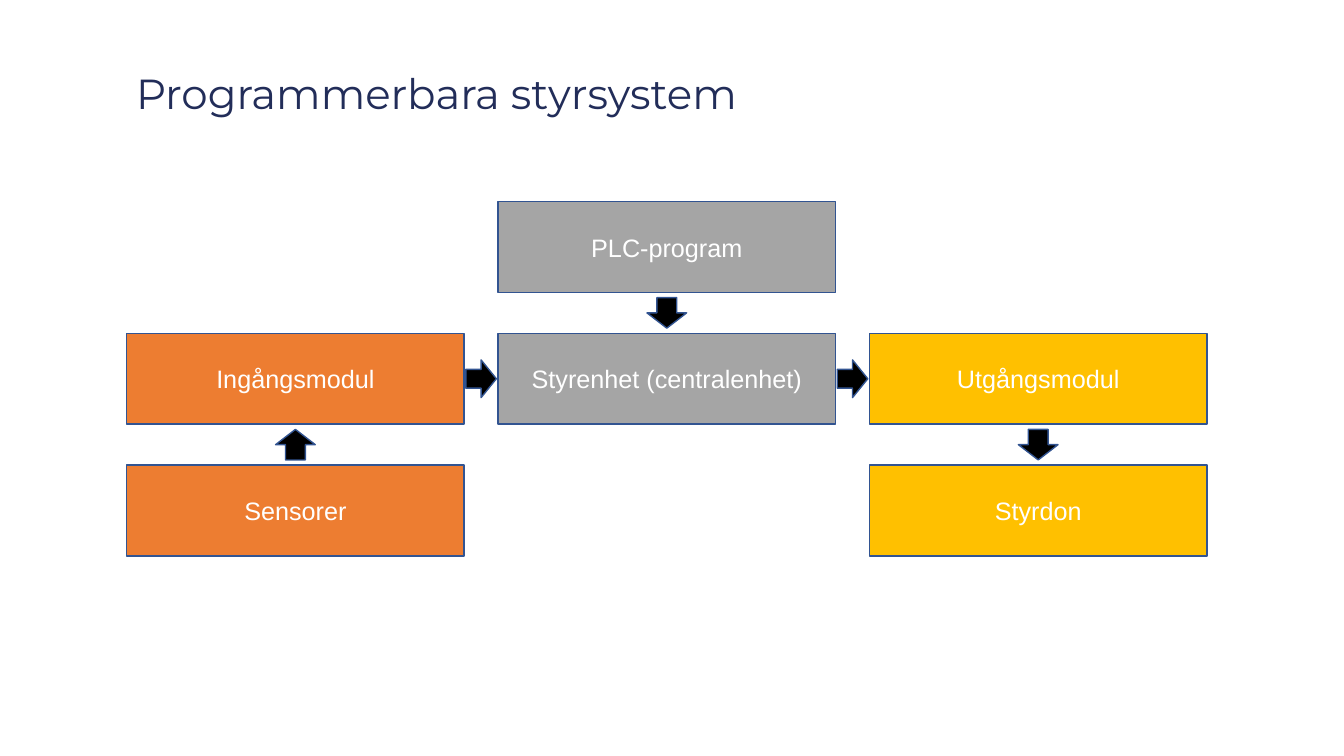
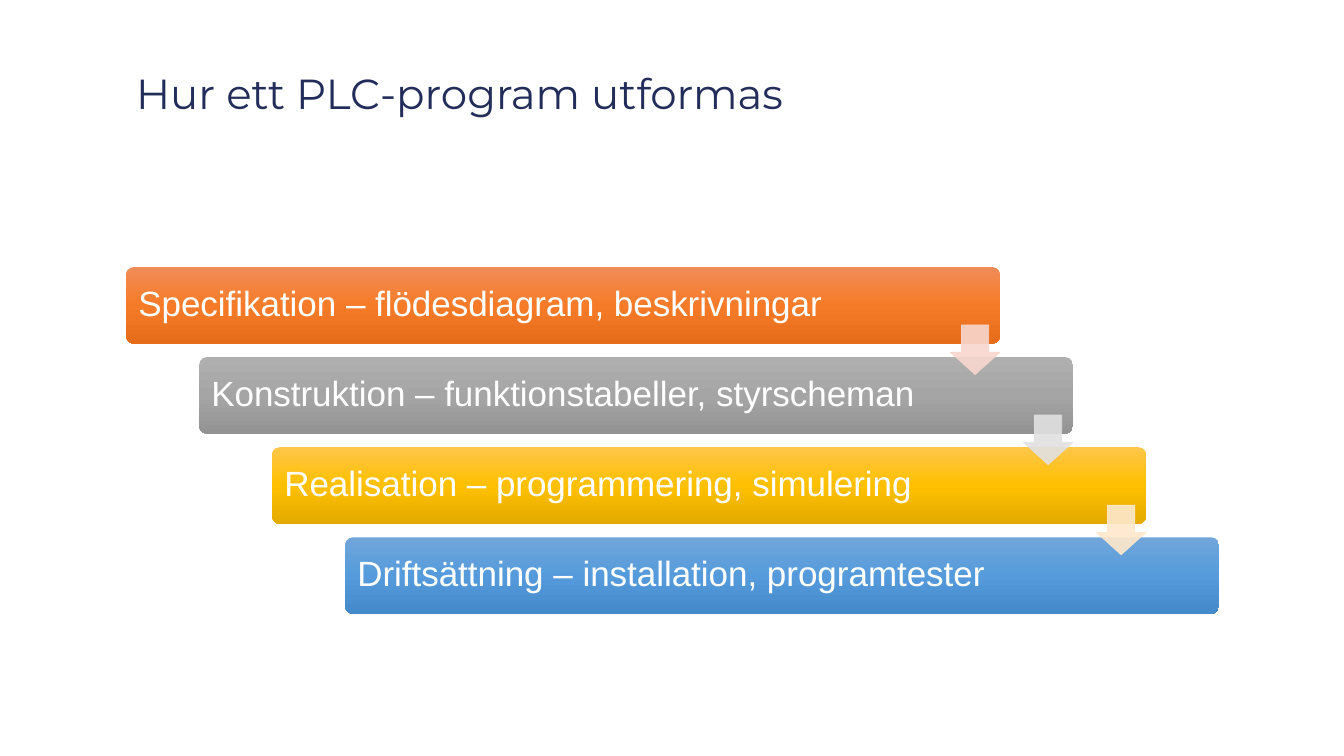
"""Two slides on PLC systems: a block diagram and a staircase of steps."""
import copy

import pptx
import pptx.dml.color
import pptx.enum.shapes
import pptx.enum.text
import pptx.oxml
import pptx.oxml.ns
import pptx.util

Cm, Pt = pptx.util.Cm, pptx.util.Pt
RGB = pptx.dml.color.RGBColor
Kind = pptx.enum.shapes.MSO_SHAPE
Align = pptx.enum.text.PP_ALIGN
Anchor = pptx.enum.text.MSO_ANCHOR
qn = pptx.oxml.ns.qn

NAVY = RGB(0x22, 0x2D, 0x59)
EDGE = RGB(0x32, 0x54, 0x91)
WHITE = RGB(0xFF, 0xFF, 0xFF)
BLACK = RGB(0x00, 0x00, 0x00)
ORANGE = RGB(0xED, 0x7D, 0x31)
GREY = RGB(0xA5, 0xA5, 0xA5)
GOLD = RGB(0xFF, 0xC0, 0x00)
FLAME = (RGB(0xF1, 0x8C, 0x57), RGB(0xF6, 0x7B, 0x28), RGB(0xE5, 0x6C, 0x19))
STONE = (RGB(0xAF, 0xAF, 0xAF), GREY, RGB(0x93, 0x93, 0x93))
AMBER = (RGB(0xFF, 0xC6, 0x4B), GOLD, RGB(0xE3, 0xAB, 0x00))
BLUE = (RGB(0x71, 0xA6, 0xDB), RGB(0x55, 0x9B, 0xDB), RGB(0x44, 0x8A, 0xCA))
ROSE = RGB(0xF8, 0xD7, 0xCE)
MIST = RGB(0xE1, 0xE1, 0xE1)
CREAM = RGB(0xFF, 0xE8, 0xCC)

BLOCKS = [
    ("Ingångsmodul", 0, 1, ORANGE),
    ("Styrenhet (centralenhet)", 1, 1, GREY),
    ("Utgångsmodul", 2, 1, GOLD),
    ("Sensorer", 0, 2, ORANGE),
    ("Styrdon", 2, 2, GOLD),
    ("PLC-program", 1, 0, GREY),
]
FLOWS = [
    ((0, 1), (1, 1)),
    ((1, 1), (2, 1)),
    ((1, 0), (1, 1)),
    ((0, 2), (0, 1)),
    ((2, 1), (2, 2)),
]
STEPS = [
    ("Specifikation – flödesdiagram, beskrivningar", FLAME, ROSE),
    ("Konstruktion – funktionstabeller, styrscheman", STONE, MIST),
    ("Realisation – programmering, simulering", AMBER, CREAM),
    ("Driftsättning – installation, programtester", BLUE, None),
]

LEFT, TOP = 3.19, 5.08
BLOCK_W, BLOCK_H = 8.51, 2.29
COL_STEP, ROW_STEP = 9.36, 3.32
LONG, SHORT = 1.0, 0.77

BAR_X, BAR_Y, BAR_W, BAR_H = 3.18, 6.73, 22.02, 1.93
STEP_X, STEP_Y = 1.84, 2.27
HEAD, DROP = 1.25, 1.46


def write(shape, text, size=18, font="Arial", color=WHITE, align=Align.LEFT,
          anchor=Anchor.MIDDLE, space=None):
    """Put one formatted line of text in a shape."""
    frame = shape.text_frame
    frame.word_wrap = True
    frame.vertical_anchor = anchor
    para = frame.paragraphs[0]
    para.text = text
    para.alignment = align
    if space:
        para.line_spacing = space
    para.font.size = Pt(size)
    para.font.name = font
    para.font.color.rgb = color


def draw(slide, kind, x, y, w, h, fill=None, line=None, weight=1):
    """Add a flat preset shape placed in centimetres."""
    shape = slide.shapes.add_shape(kind, Cm(x), Cm(y), Cm(w), Cm(h))
    shape.shadow.inherit = False
    if fill is not None:
        shape.fill.solid()
        shape.fill.fore_color.rgb = fill
    if line is None:
        shape.line.fill.background()
    else:
        shape.line.color.rgb = line
        shape.line.width = Pt(weight)
    return shape


def shade(shape, colors):
    """Fill a shape with a top-down gradient of evenly spaced colours."""
    shape.fill.gradient()
    stops = next(shape.element.iter(qn("a:gsLst")))
    while len(stops) < len(colors):
        stops.append(copy.deepcopy(stops[0]))
    for i, (stop, color) in enumerate(zip(shape.fill.gradient_stops, colors)):
        stop.position = i / (len(colors) - 1)
        stop.color.rgb = color
    shape.fill.gradient_angle = 270


def fade(shape, percent):
    """Set the opacity of a shape's fill and line."""
    for color in shape.element.spPr.iter(qn("a:srgbClr")):
        alpha = pptx.oxml.parse_xml(
            f'<a:alpha {pptx.oxml.ns.nsdecls("a")} val="{percent * 1000}"/>')
        color.append(alpha)


def start(deck, title):
    """Add a blank slide with the shared title."""
    slide = deck.slides.add_slide(deck.slide_layouts[6])
    box = slide.shapes.add_textbox(Cm(3.18), Cm(1.73), Cm(27.51), Cm(4.11))
    write(box, title, size=30, font="Montserrat", color=NAVY,
          anchor=Anchor.TOP, space=0.9)
    return slide


def middle(col, row):
    """Give the centre of a block in the grid."""
    return (LEFT + col * COL_STEP + BLOCK_W / 2,
            TOP + row * ROW_STEP + BLOCK_H / 2)


def blocks(deck):
    """Build the block diagram."""
    slide = start(deck, "Programmerbara styrsystem")
    for text, col, row, fill in BLOCKS:
        x, y = middle(col, row)
        box = draw(slide, Kind.RECTANGLE, x - BLOCK_W / 2, y - BLOCK_H / 2,
                   BLOCK_W, BLOCK_H, fill, EDGE)
        write(box, text, align=Align.CENTER)
    for tail, head in FLOWS:
        (x1, y1), (x2, y2) = middle(*tail), middle(*head)
        if y1 == y2:
            kind, w, h = Kind.RIGHT_ARROW, SHORT, LONG * 0.95
        else:
            kind, w, h = Kind.DOWN_ARROW, LONG, SHORT
        arrow = draw(slide, kind, (x1 + x2 - w) / 2, (y1 + y2 - h) / 2,
                     w, h, BLACK, EDGE)
        if y2 < y1:
            arrow.rotation = 180


def stairs(deck):
    """Build the staircase of steps."""
    slide = start(deck, "Hur ett PLC-program utformas")
    spots = [(BAR_X + i * STEP_X, BAR_Y + i * STEP_Y)
             for i in range(len(STEPS))]
    for (x, y), (text, colors, _) in zip(spots, STEPS):
        bar = draw(slide, Kind.ROUNDED_RECTANGLE, x, y, BAR_W, BAR_H)
        bar.adjustments[0] = 0.1
        shade(bar, colors)
        write(bar, text, size=25, space=0.9)
    for (x, y), (_, _, tint) in zip(spots[:-1], STEPS):
        arrow = draw(slide, Kind.DOWN_ARROW, x + BAR_W - HEAD, y + DROP,
                     HEAD, HEAD, tint, tint, 0.5)
        arrow.adjustments[0] = 0.55
        arrow.adjustments[1] = 0.45
        fade(arrow, 90)


def main():
    """Build and save the deck."""
    deck = pptx.Presentation()
    deck.slide_width, deck.slide_height = Cm(33.87), Cm(19.05)
    blocks(deck)
    stairs(deck)
    deck.save("out.pptx")


if __name__ == "__main__":
    main()
